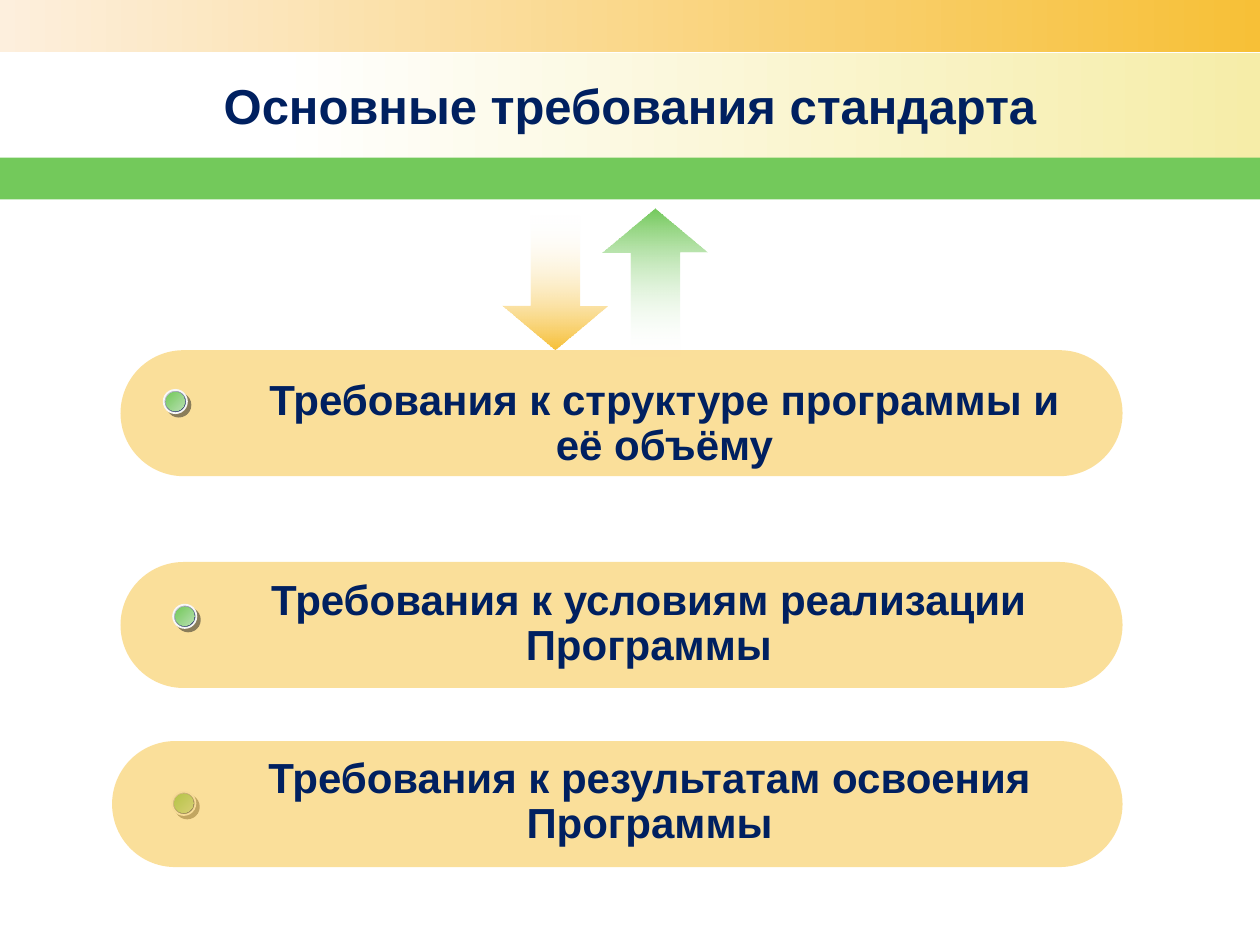
import dataclasses

import lxml.etree
import pptx
import pptx.dml.color
import pptx.enum.shapes
import pptx.enum.text
import pptx.oxml.ns
import pptx.util

Cm = pptx.util.Cm
Pt = pptx.util.Pt
Kind = pptx.enum.shapes.MSO_SHAPE
qn = pptx.oxml.ns.qn
rgb = pptx.dml.color.RGBColor.from_string


@dataclasses.dataclass(frozen=True)
class Theme:
    font: str = "Arial"
    title_size: int = 28
    text_size: int = 24
    navy: str = "002060"
    gold: str = "F7C037"
    cream: str = "FDEFDD"
    lemon: str = "F6EDA8"
    green: str = "73C95B"
    light_green: str = "B7DFB0"
    white: str = "FFFFFF"
    rim: str = "F8F8F8"
    rim_start: str = "DDDDE1"
    rim_end: str = "223864"
    shadow: str = "1C1C1C"


theme = Theme()
presentation = pptx.Presentation()
presentation.slide_width, presentation.slide_height = Cm(25.4), Cm(19.05)
slide = presentation.slides.add_slide(presentation.slide_layouts[5])


def add_filled(kind, box, colors, angle=0, alpha=None):
    """Add a shape; one colour fills it solid, two make a gradient.
    alpha is the opacity in percent of the first colour."""
    shape = slide.shapes.add_shape(kind, *map(Cm, box))
    shape.shadow.inherit = False
    shape.line.fill.background()
    if len(colors) == 1:
        shape.fill.solid()
        shape.fill.fore_color.rgb = rgb(colors[0])
    else:
        shape.fill.gradient()
        shape.fill.gradient_angle = angle
        for stop, color in zip(shape.fill.gradient_stops, colors):
            stop.color.rgb = rgb(color)
    if alpha is not None:
        color_element = next(shape._element.spPr.iter(qn("a:srgbClr")))
        lxml.etree.SubElement(color_element, qn("a:alpha"), val=str(alpha * 1000))
    return shape


def format_text(text_frame, text, size):
    text_frame.text = text
    text_frame.word_wrap = True
    paragraph = text_frame.paragraphs[0]
    paragraph.alignment = pptx.enum.text.PP_ALIGN.CENTER
    paragraph.font.name = theme.font
    paragraph.font.size = Pt(size)
    paragraph.font.bold = True
    paragraph.font.color.rgb = rgb(theme.navy)
    return paragraph


# Header bands
add_filled(Kind.RECTANGLE, (0, 0, 25.4, 1.06), (theme.cream, theme.gold))
add_filled(Kind.RECTANGLE, (5.51, 1.06, 19.89, 2.12), (theme.white, theme.lemon))
add_filled(Kind.RECTANGLE, (0, 3.18, 25.4, 0.84), (theme.green,))

# Title, brought in front of the bands
title = slide.shapes.title
title.left, title.top, title.width, title.height = map(Cm, (1.27, 1.06, 22.86, 2.09))
format_text(title.text_frame, "Основные требования стандарта", theme.title_size)
title.text_frame.vertical_anchor = pptx.enum.text.MSO_ANCHOR.MIDDLE
title._element.getparent().append(title._element)

# Arrows fading in from the tail: down, then up
for left, width, rotation, color in (
    (9.83, 2.72, 90, theme.gold),
    (11.71, 2.99, 270, theme.green),
):
    arrow = add_filled(Kind.RIGHT_ARROW, (left, 4.63, width, 2.12),
                       (theme.white, color), alpha=0)
    arrow.rotation = rotation
    arrow.adjustments[0], arrow.adjustments[1] = 0.465, 0.421

# Requirements: bar (left, top), text box (left, top, width), dot (left, top)
bar_right, bar_height = 22.63, 2.54
rim_size, dot_size = 0.47, 0.38
requirements = (
    ("Требования к структуре программы и её объёму",
     (2.43, 7.06), (4.9, 7.52, 16.99), (3.3, 7.86), False),
    ("Требования к условиям реализации Программы",
     (2.43, 11.33), (4.37, 11.55, 17.42), (3.49, 12.19), False),
    ("Требования к результатам освоения Программы",
     (2.26, 14.94), (4.6, 15.14, 16.99), (3.47, 15.96), True),
)
for text, (bar_left, bar_top), text_place, (dot_left, dot_top), dot_behind in requirements:
    bar = add_filled(Kind.ROUNDED_RECTANGLE,
                     (bar_left, bar_top, bar_right - bar_left, bar_height),
                     (theme.gold,), alpha=50)
    bar.adjustments[0] = 0.5

    # Dot with a light rim and a soft offset shadow
    rim = add_filled(Kind.OVAL, (dot_left, dot_top, rim_size, rim_size),
                     (theme.rim_start, theme.rim_end), angle=315)
    rim.line.color.rgb = rgb(theme.rim)
    rim.line.width = Pt(1)
    effects = rim._element.spPr.find(qn("a:effectLst"))
    shadow = lxml.etree.SubElement(effects, qn("a:outerShdw"), dist=str(Pt(2.8)),
                                   dir="2700000", algn="ctr", rotWithShape="0")
    shadow_color = lxml.etree.SubElement(shadow, qn("a:srgbClr"), val=theme.shadow)
    lxml.etree.SubElement(shadow_color, qn("a:alpha"), val="50000")
    inset = (rim_size - dot_size) / 2
    add_filled(Kind.OVAL, (dot_left + inset, dot_top + inset, dot_size, dot_size),
               (theme.green, theme.light_green), angle=315)

    # The last dot shows through its translucent bar
    if dot_behind:
        bar._element.getparent().append(bar._element)

    text_box = slide.shapes.add_textbox(*map(Cm, (*text_place, 2.1)))
    paragraph = format_text(text_box.text_frame, text, theme.text_size)
    paragraph.line_spacing = 0.9
    text_box.text_frame.auto_size = pptx.enum.text.MSO_AUTO_SIZE.SHAPE_TO_FIT_TEXT

presentation.save("out.pptx")
